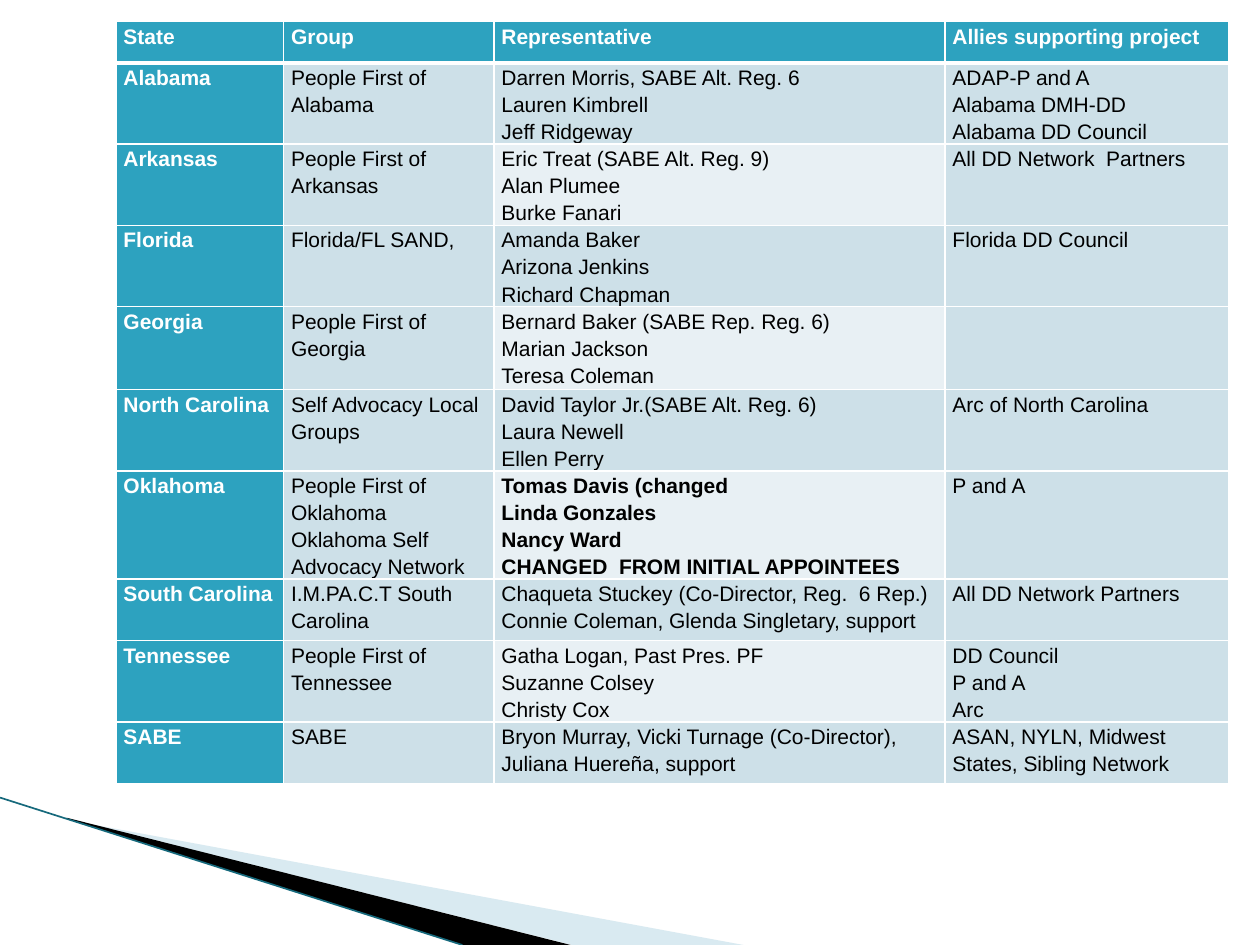
from dataclasses import dataclass

from lxml import etree
from pptx import Presentation
from pptx.dml.color import RGBColor
from pptx.enum.shapes import MSO_CONNECTOR
from pptx.oxml.ns import qn
from pptx.util import Inches, Pt

STRAIGHT = MSO_CONNECTOR.STRAIGHT


@dataclass(frozen=True)
class Theme:
    font: str = "Arial"
    text_size: float = 12
    line_spacing: float = 1.15
    white: str = "FFFFFF"
    black: str = "000000"
    accent: str = "2DA2BF"
    band_dark: str = "CDE0E8"
    band_light: str = "E8F0F4"
    wedge: str = "A0CBDC"
    edge: str = "16697C"
    border: float = 1
    header_border: float = 3
    edge_width: float = 0.95


# Table content: state, group, representatives, allies (one line per paragraph)
HEADERS = ["State", "Group", "Representative", "Allies supporting project"]
STATES = [
    ["Alabama", "People First of Alabama",
     "Darren Morris, SABE Alt. Reg. 6\nLauren Kimbrell\nJeff Ridgeway",
     "ADAP-P and A\nAlabama DMH-DD\nAlabama DD Council"],
    ["Arkansas", "People First of Arkansas",
     "Eric Treat (SABE Alt. Reg. 9)\nAlan Plumee\nBurke Fanari",
     "All DD Network  Partners"],
    ["Florida", "Florida/FL SAND,",
     "Amanda Baker\nArizona Jenkins\nRichard Chapman", "Florida DD Council"],
    ["Georgia", "People First of Georgia",
     "Bernard Baker (SABE Rep. Reg. 6)\nMarian Jackson\nTeresa Coleman", ""],
    ["North Carolina", "Self Advocacy Local Groups",
     "David Taylor Jr.(SABE Alt. Reg. 6)\nLaura Newell\nEllen Perry",
     "Arc of North Carolina"],
    ["Oklahoma", "People First of Oklahoma\nOklahoma Self Advocacy Network",
     "Tomas Davis (changed\nLinda Gonzales\nNancy Ward\n"
     "CHANGED  FROM INITIAL APPOINTEES", "P and A"],
    ["South Carolina", "I.M.PA.C.T South Carolina",
     "Chaqueta Stuckey (Co-Director, Reg.  6 Rep.)\n"
     "Connie Coleman, Glenda Singletary, support", "All DD Network Partners"],
    ["Tennessee", "People First of Tennessee",
     "Gatha Logan, Past Pres. PF\nSuzanne Colsey\nChristy Cox",
     "DD Council\nP and A\nArc"],
    ["SABE", "SABE",
     "Bryon Murray, Vicki Turnage (Co-Director), Juliana Huereña, support",
     "ASAN, NYLN, Midwest States, Sibling Network"],
]
COLUMN_WIDTHS = [1.33, 1.67, 3.58, 2.25]
ROW_HEIGHTS = [0.33] + [0.49] * 3 + [0.66] + [0.49] * 5
REPRESENTATIVE = 2
CHANGED_STATE = "Oklahoma"


def write_text(frame, text, *, theme, color, bold=False):
    """Fill a text frame, one paragraph for each line of text."""
    for index, line in enumerate(text.split("\n")):
        para = frame.paragraphs[0] if index == 0 else frame.add_paragraph()
        para.line_spacing = theme.line_spacing
        para.font.size = Pt(theme.text_size)
        if line:
            span = para.add_run()
            span.text = line
            span.font.name = theme.font
            span.font.size = Pt(theme.text_size)
            span.font.bold = bold
            span.font.color.rgb = RGBColor.from_string(color)


class SlideBuilder:
    def __init__(self, slide, theme):
        self.slide = slide
        self.theme = theme

    def polygon(self, points, color, opacity=None):
        corners = [(Inches(x), Inches(y)) for x, y in points]
        builder = self.slide.shapes.build_freeform(*corners[0])
        builder.add_line_segments(corners[1:], close=True)
        shape = builder.convert_to_shape()
        shape.shadow.inherit = False
        shape.line.fill.background()
        shape.fill.solid()
        shape.fill.fore_color.rgb = RGBColor.from_string(color)
        if opacity is not None:
            swatch = next(shape._element.spPr.iter(qn("a:srgbClr")))
            etree.SubElement(swatch, qn("a:alpha"), val=str(opacity * 1000))

    def line(self, start, end, color, width):
        ends = [Inches(value) for value in (*start, *end)]
        connector = self.slide.shapes.add_connector(STRAIGHT, *ends)
        connector.line.color.rgb = RGBColor.from_string(color)
        connector.line.width = Pt(width)
        etree.SubElement(connector._element.spPr, qn("a:effectLst"))

    def cell_borders(self, cell, **widths):
        properties = cell._tc.get_or_add_tcPr()
        for side in "LRTB":
            width = widths.get(side, self.theme.border)
            border = etree.SubElement(properties, qn(f"a:ln{side}"), w=str(Pt(width)))
            fill = etree.SubElement(border, qn("a:solidFill"))
            etree.SubElement(fill, qn("a:srgbClr"), val=self.theme.white)

    def cell(self, cell, text, *, fill, color, bold, borders):
        cell.margin_left = cell.margin_right = Inches(0.06)
        cell.margin_top = cell.margin_bottom = 0
        self.cell_borders(cell, **borders)
        cell.fill.solid()
        cell.fill.fore_color.rgb = RGBColor.from_string(fill)
        write_text(cell.text_frame, text, theme=self.theme, color=color, bold=bold)

    def state_table(self, left, top, height):
        theme = self.theme
        rows = [HEADERS] + STATES
        frame = self.slide.shapes.add_table(
            len(rows), len(HEADERS), Inches(left), Inches(top),
            Inches(sum(COLUMN_WIDTHS)), Inches(height))
        table = frame.table
        table.first_col = True
        for column, width in zip(table.columns, COLUMN_WIDTHS):
            column.width = Inches(width)
        for row, row_height in zip(table.rows, ROW_HEIGHTS):
            row.height = Inches(row_height)
        frame.height = Inches(height)

        rule = theme.header_border
        for r, values in enumerate(rows):
            borders = {0: {"B": rule}, 1: {"T": rule}}.get(r, {})
            for c, text in enumerate(values):
                is_heading = r == 0 or c == 0
                is_representative = c == REPRESENTATIVE
                if is_heading:
                    fill = theme.accent
                elif is_representative and r % 2 == 0:
                    fill = theme.band_light
                else:
                    fill = theme.band_dark
                changed = is_representative and values[0] == CHANGED_STATE
                self.cell(table.cell(r, c), text, fill=fill,
                          color=theme.white if is_heading else theme.black,
                          bold=is_heading or changed, borders=borders)


def main():
    theme = Theme()
    deck = Presentation()
    deck.slide_width, deck.slide_height = Inches(10), Inches(7.5)
    page = SlideBuilder(deck.slides.add_slide(deck.slide_layouts[6]), theme)

    # Corner decoration
    page.polygon([(0.55, 6.51), (5.9, 7.5), (4.54, 7.5), (0.55, 6.5)],
                 theme.wedge, opacity=40)
    page.polygon([(0.53, 6.49), (4.53, 7.5), (3.67, 7.5), (0.54, 6.5)], theme.black)
    page.line((0, 6.33), (3.67, 7.5), theme.edge, theme.edge_width)

    # State representatives
    page.state_table(0.92, 0.17, 6.38)

    deck.save("out.pptx")


if __name__ == "__main__":
    main()
